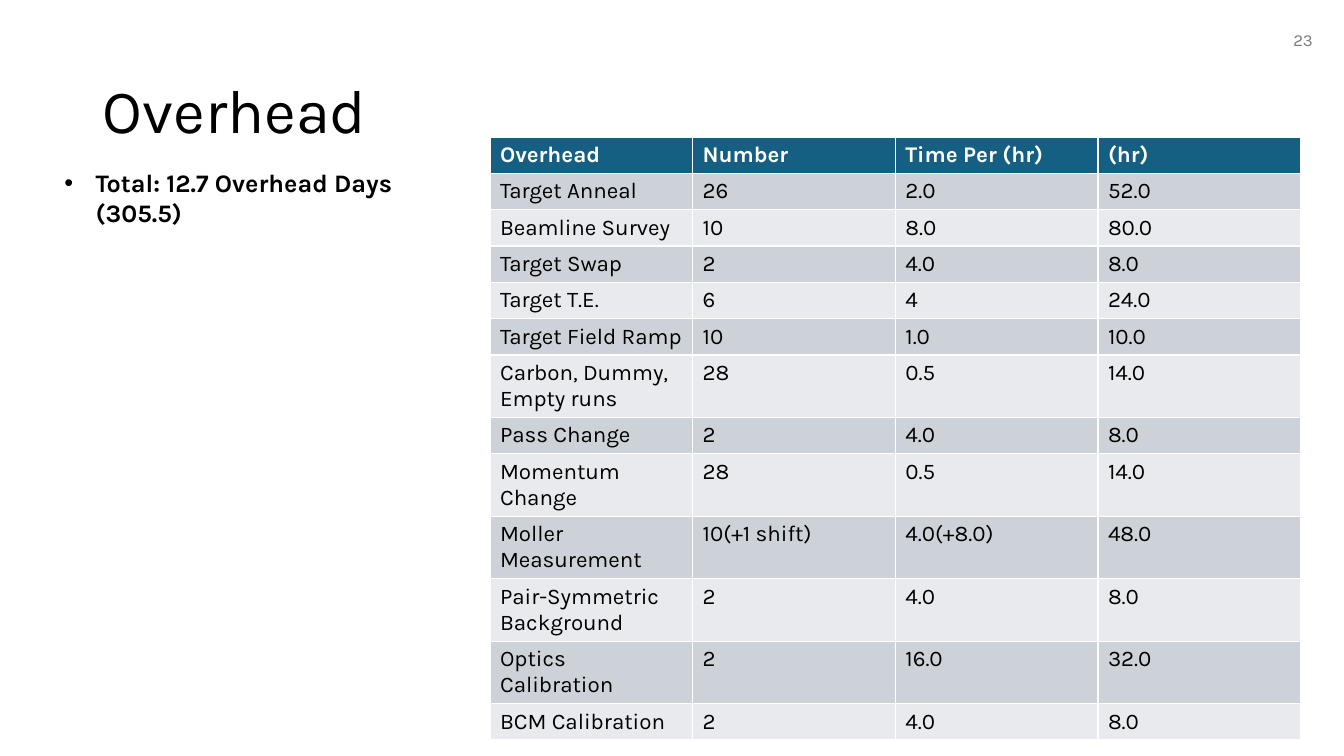
from lxml.etree import SubElement
from pptx import Presentation
from pptx.dml.color import RGBColor
from pptx.enum.text import MSO_ANCHOR, PP_ALIGN
from pptx.oxml.ns import qn
from pptx.util import Inches, Pt

FONT = "Karla"
BLACK, WHITE, GREY = "000000", "FFFFFF", "797979"
HEADER_FILL, BAND_FILLS = "156082", ("CCD2D8", "E8EAED")
COLUMN_WIDTH, ROW_HEIGHT, TALL_ROW_HEIGHT = 2.01, 0.31, 0.53
TALL_ACTIVITY = "Carbon, Dummy, Empty runs"

OVERHEADS = [
    ("Overhead", "Number", "Time Per (hr)", "(hr)"),
    ("Target Anneal", "26", "2.0", "52.0"),
    ("Beamline Survey", "10", "8.0", "80.0"),
    ("Target Swap", "2", "4.0", "8.0"),
    ("Target T.E.", "6", "4", "24.0"),
    ("Target Field Ramp", "10", "1.0", "10.0"),
    (TALL_ACTIVITY, "28", "0.5", "14.0"),
    ("Pass Change", "2", "4.0", "8.0"),
    ("Momentum Change", "28", "0.5", "14.0"),
    ("Moller Measurement", "10(+1 shift)", "4.0(+8.0)", "48.0"),
    ("Pair-Symmetric Background", "2", "4.0", "8.0"),
    ("Optics Calibration", "2", "16.0", "32.0"),
    ("BCM Calibration", "2", "4.0", "8.0"),
]


def color(value):
    """Turn a hex string into a colour."""
    return RGBColor.from_string(value)


def write(frame, text, size, ink, bold=False):
    """Put one formatted paragraph into a text frame and return it."""
    frame.text = text
    paragraph = frame.paragraphs[0]
    font = paragraph.runs[0].font
    font.name, font.size, font.bold = FONT, Pt(size), bold
    font.color.rgb = color(ink)
    return paragraph


def place_title(slide, left, top, width, height):
    """Move and format the title placeholder."""
    title = slide.shapes.title
    title.left, title.top = Inches(left), Inches(top)
    title.width, title.height = Inches(width), Inches(height)
    title.text_frame.vertical_anchor = MSO_ANCHOR.MIDDLE
    paragraph = write(title.text_frame, "Overhead", 44, BLACK)
    paragraph.alignment = PP_ALIGN.LEFT
    paragraph.line_spacing = 0.9


def add_overhead_table(slide, left, top):
    """Add the table of overhead hours with banded rows."""
    columns = len(OVERHEADS[0])
    table = slide.shapes.add_table(
        len(OVERHEADS), columns, Inches(left), Inches(top),
        Inches(COLUMN_WIDTH * columns), Inches(ROW_HEIGHT * len(OVERHEADS)),
    ).table
    for column in table.columns:
        column.width = Inches(COLUMN_WIDTH)
    for index, overhead in enumerate(OVERHEADS):
        header = index == 0
        tall = overhead[0] == TALL_ACTIVITY
        table.rows[index].height = Inches(TALL_ROW_HEIGHT if tall else ROW_HEIGHT)
        fill = HEADER_FILL if header else BAND_FILLS[(index - 1) % 2]
        for position, entry in enumerate(overhead):
            cell = table.cell(index, position)
            cell.fill.solid()
            cell.fill.fore_color.rgb = color(fill)
            write(cell.text_frame, entry, 16, WHITE if header else BLACK, header)


def add_text_region(slide, left, top, width, height):
    """Add an empty wrapping text box and return its frame."""
    frame = slide.shapes.add_textbox(
        Inches(left), Inches(top), Inches(width), Inches(height)).text_frame
    frame.word_wrap = True
    return frame


def add_total(slide, left, top, width, height):
    """Add the bulleted total."""
    frame = add_text_region(slide, left, top, width, height)
    paragraph = write(frame, "Total: 12.7 Overhead Days (305.5)", 18, BLACK, True)
    properties = paragraph._p.get_or_add_pPr()
    indent = Inches(0.31)
    properties.set("marL", str(indent))
    properties.set("indent", str(-indent))
    SubElement(properties, qn("a:buFont"), typeface="Arial")
    SubElement(properties, qn("a:buChar"), char="•")


def add_page_number(slide, left, top, width, height):
    """Add the right-aligned page number."""
    frame = add_text_region(slide, left, top, width, height)
    frame.vertical_anchor = MSO_ANCHOR.MIDDLE
    write(frame, "23", 12, GREY).alignment = PP_ALIGN.RIGHT


def main():
    """Build and save the overhead slide."""
    presentation = Presentation()
    presentation.slide_width = Inches(13.33)
    presentation.slide_height = Inches(7.5)
    slide = presentation.slides.add_slide(presentation.slide_layouts[5])
    place_title(slide, 0.92, 0.4, 11.5, 1.45)
    add_overhead_table(slide, 4.86, 1.36)
    add_total(slide, 0.54, 1.61, 4.18, 1.01)
    add_page_number(slide, 10.12, 0.2, 3, 0.4)
    presentation.save("out.pptx")


if __name__ == "__main__":
    main()
